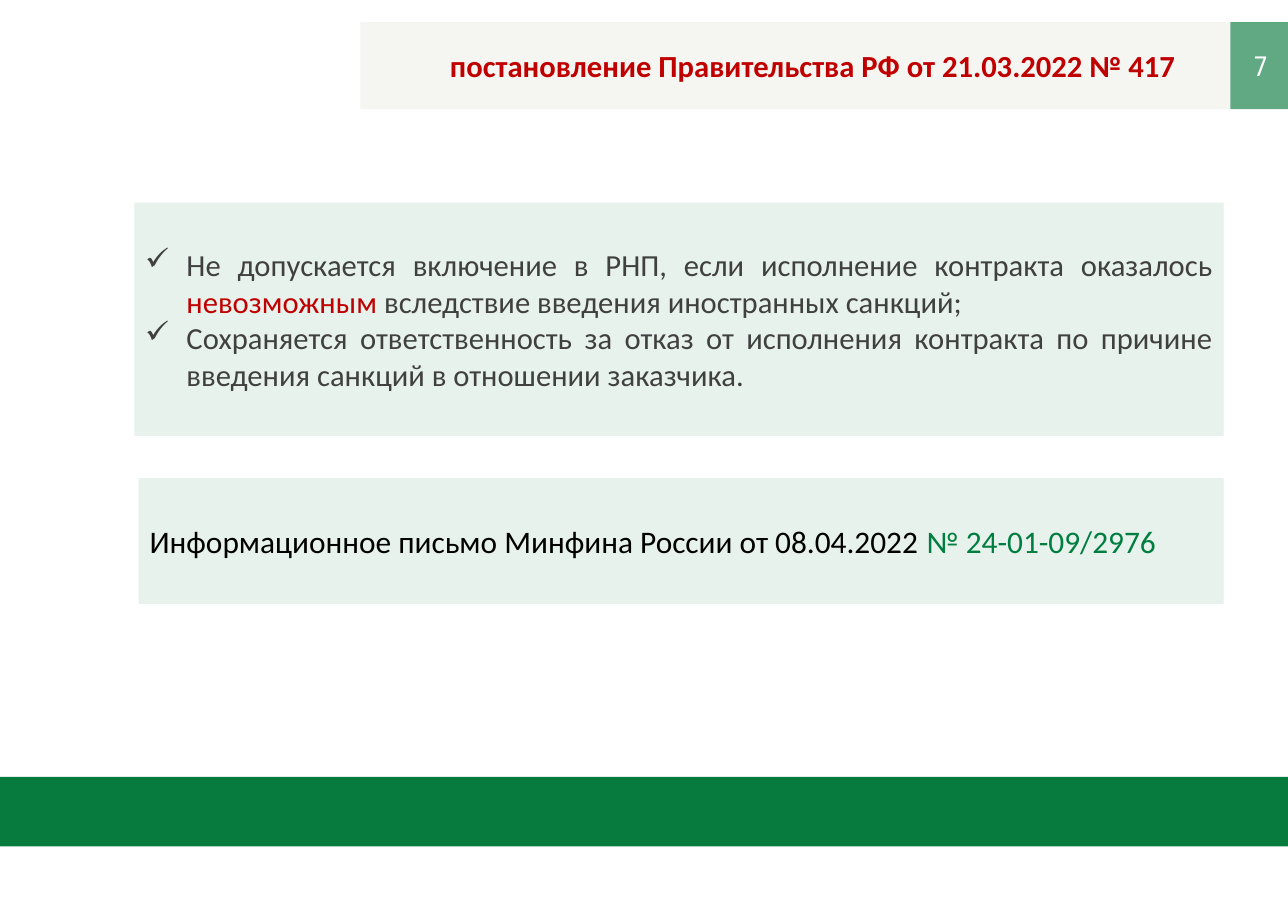
from lxml import etree
from pptx import Presentation
from pptx.dml.color import RGBColor
from pptx.enum.shapes import MSO_SHAPE as Shape
from pptx.enum.text import MSO_ANCHOR as Anchor, PP_ALIGN as Align
from pptx.oxml.ns import qn
from pptx.util import Cm, Pt

# Content: each paragraph is a list of (text, colour) runs
TITLE = [[("постановление Правительства РФ от 21.03.2022 № 417", "red")]]
PAGE_NUMBER = [[("7", "white")]]
RULES = [
    [("Не допускается включение в РНП, если исполнение контракта оказалось ", "gray"),
     ("невозможным", "red"),
     (" вследствие введения иностранных санкций;", "gray")],
    [("Сохраняется ответственность за отказ от исполнения контракта по причине "
      "введения санкций в отношении заказчика.", "gray")],
]
LETTER = [[("Информационное письмо Минфина России от 08.04.2022 ", "black"),
           ("№ 24-01-09/2976", "number")]]

COLORS = {"red": "C00000", "white": "FFFFFF", "gray": "404040", "black": "000000",
          "number": "007E40", "green": "077A3E", "pale": "E7F2EC", "header": "F5F6F1"}

# Layout, in centimetres
SLIDE_W, SLIDE_H = 29.7, 21
HEADER_TOP, HEADER_H = 0.51, 2.01
HEADER_LEFT, PAGE_LEFT, PAGE_W = 8.31, 28.37, 1.4
PANEL_RIGHT = 28.22
BULLET_INDENT = 0.95

prs = Presentation()
prs.slide_width, prs.slide_height = Cm(SLIDE_W), Cm(SLIDE_H)
slide = prs.slides.add_slide(prs.slide_layouts[6])


def rgb(name):
    return RGBColor.from_string(COLORS[name])


def add_band(left, top, width, height, color):
    band = slide.shapes.add_shape(Shape.RECTANGLE, Cm(left), Cm(top), Cm(width), Cm(height))
    band.shadow.inherit = False
    band.fill.solid()
    band.fill.fore_color.rgb = rgb(color)
    band.line.fill.background()
    return band


def add_check_bullet(paragraph):
    props = paragraph._p.get_or_add_pPr()
    props.set("marL", str(Cm(BULLET_INDENT)))
    props.set("indent", str(-Cm(BULLET_INDENT)))
    etree.SubElement(props, qn("a:buChar"), char="✓")


def write(shape, paragraphs, size, align, font="Calibri", bold=False, bullets=False):
    frame = shape.text_frame
    frame.word_wrap = True
    frame.vertical_anchor = Anchor.MIDDLE
    for i, runs in enumerate(paragraphs):
        paragraph = frame.paragraphs[0] if i == 0 else frame.add_paragraph()
        paragraph.alignment = align
        if bullets:
            add_check_bullet(paragraph)
        paragraph.font.name = font
        paragraph.font.size = Pt(size)
        paragraph.font.bold = bold
        for text, color in runs:
            run = paragraph.add_run()
            run.text = text
            run.font.color.rgb = rgb(color)


# Header with title
add_band(HEADER_LEFT, HEADER_TOP, PAGE_LEFT - HEADER_LEFT, HEADER_H, "header")
title = slide.shapes.add_textbox(Cm(9.12), Cm(0.94), Cm(19.25), Cm(1.12))
write(title, TITLE, 20, Align.CENTER, bold=True)

# Translucent page number
page = add_band(PAGE_LEFT, HEADER_TOP, PAGE_W, HEADER_H, "green")
page_color = page.fill._xPr.find(".//" + qn("a:srgbClr"))
etree.SubElement(page_color, qn("a:alpha"), val="64000")
write(page, PAGE_NUMBER, 18, Align.CENTER, font="Roboto Condensed")

# Panels
rules = add_band(3.1, 4.67, PANEL_RIGHT - 3.1, 5.38, "pale")
write(rules, RULES, 20, Align.JUSTIFY, bullets=True)
letter = add_band(3.2, 11.02, PANEL_RIGHT - 3.2, 2.9, "pale")
write(letter, LETTER, 20.5, Align.LEFT)

# Footer
add_band(0, 17.91, SLIDE_W, 1.6, "green")

prs.save("out.pptx")
